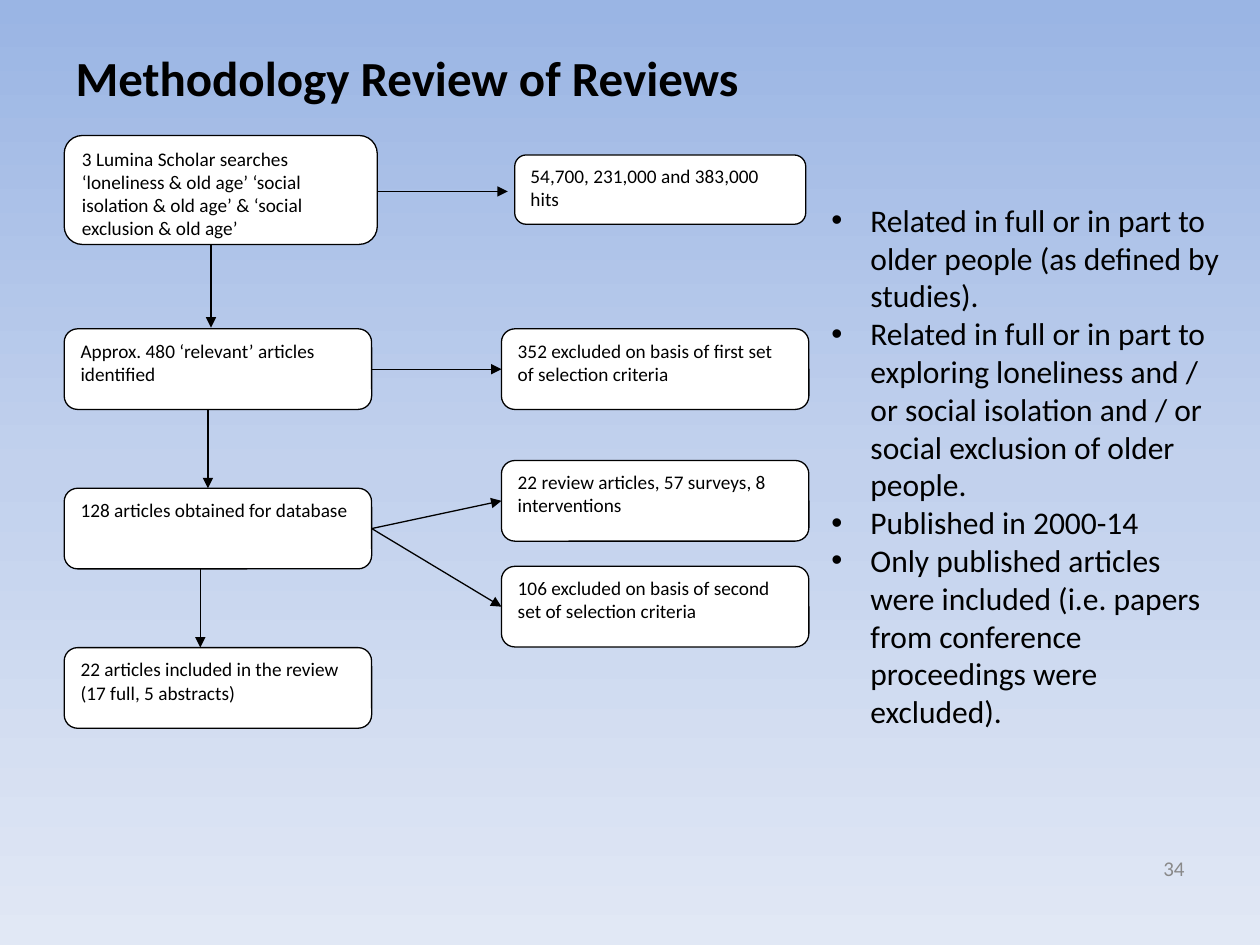
from copy import deepcopy
from dataclasses import dataclass

from pptx import Presentation
from pptx.dml.color import RGBColor
from pptx.enum.shapes import MSO_CONNECTOR, MSO_SHAPE
from pptx.enum.text import MSO_ANCHOR, MSO_AUTO_SIZE, PP_ALIGN
from pptx.oxml.ns import qn
from pptx.util import Inches, Pt

LEFT, RIGHT = 1, 3


@dataclass(frozen=True)
class Theme:
    """Colours, font and type sizes of the slide."""
    font: str = "Calibri"
    ink: str = "000000"
    paper: str = "FFFFFF"
    muted: str = "898989"
    sky: tuple = ((0, "9AB5E4"), (0.5, "C2D1ED"), (1, "E1E8F5"))
    title: float = 28
    body: float = 18
    number: float = 12
    box: float = 11
    line: float = 0.75


@dataclass(frozen=True)
class Area:
    """A rectangle on a grid of 100 columns by 75 rows."""
    col: float
    row: float
    cols: float
    rows: float


@dataclass(frozen=True)
class Box:
    """A flow chart box with its paragraph spacing."""
    key: str
    area: Area
    text: str
    spacing: float = 0


@dataclass(frozen=True)
class Arrow:
    """An arrow from grid point to grid point, with optional joins."""
    start: tuple
    end: tuple
    source: str = ""
    target: str = ""


THEME = Theme()
STEP_COL, RESULT_COL, BOX_COLS, BOX_ROWS = 5.1, 39.8, 24.4, 6.4


def step(key: str, col: float, row: float, text: str) -> Box:
    """Return a box of the standard size."""
    return Box(key, Area(col, row, BOX_COLS, BOX_ROWS), text)


BOXES = (
    Box("searches", Area(STEP_COL, 10.75, 24.85, 8.65),
        "3 Lumina Scholar searches ‘loneliness & old age’ ‘social isolation & old age’ "
        "& ‘social exclusion & old age’", 5),
    Box("hits", Area(40.85, 12.3, 23.1, 5.5), "54,700, 231,000 and 383,000 hits", 5),
    step("relevant", STEP_COL, 26.1, "Approx. 480 ‘relevant’ articles identified"),
    step("first cut", RESULT_COL, 26.1, "352 excluded on basis of first set of selection criteria"),
    step("database", STEP_COL, 38.75, "128 articles obtained for database"),
    step("types", RESULT_COL, 36.55, "22 review articles, 57 surveys, 8 interventions"),
    step("second cut", RESULT_COL, 44.95, "106 excluded on basis of second set of selection criteria"),
    step("included", STEP_COL, 51.4, "22 articles included in the review (17 full, 5 abstracts)"),
)
ARROWS = (
    Arrow((16.75, 19.4), (16.75, 26)),
    Arrow((16.5, 32.5), (16.5, 38.75)),
    Arrow((15.9, 45.15), (15.9, 51.4)),
    Arrow((30, 15.2), (40.3, 15.2)),
    Arrow((29.5, 29.3), (39.8, 29.3), "relevant", "first cut"),
    Arrow((29.5, 41.95), (39.8, 39.75), "database", "types"),
    Arrow((29.5, 41.95), (39.8, 48.15), "database", "second cut"),
)
CRITERIA = (
    "Related in full or in part to older people (as defined by studies).",
    "Related in full or in part to exploring loneliness and / or social isolation and / or "
    "social exclusion of older people.",
    "Published in 2000-14",
    "Only published articles were included (i.e. papers from conference proceedings were excluded).",
)


def grid(units: float) -> int:
    """Convert columns or rows to a length."""
    return Inches(units / 10)


def place(area: Area) -> tuple:
    """Return left, top, width and height of an area."""
    return grid(area.col), grid(area.row), grid(area.cols), grid(area.rows)


def write(tf, text: str, size: float, color: str = THEME.ink, bold: bool = False,
          align=PP_ALIGN.LEFT, anchor=MSO_ANCHOR.TOP) -> None:
    """Fill a text frame and format all of its runs."""
    tf.text = text
    tf.word_wrap = True
    tf.auto_size = MSO_AUTO_SIZE.NONE
    tf.vertical_anchor = anchor
    for p in tf.paragraphs:
        p.alignment = align
        for r in p.runs:
            r.font.name, r.font.size, r.font.bold = THEME.font, Pt(size), bold
            r.font.color.rgb = RGBColor.from_string(color)


def paint_background(s) -> None:
    """Give the slide a downward gradient of three stops."""
    fill = s.background.fill
    fill.gradient()
    fill.gradient_angle = 270
    stops = s.element.find(".//" + qn("a:gsLst"))
    stops.append(deepcopy(stops[-1]))
    for stop, (position, color) in zip(fill.gradient_stops, THEME.sky):
        stop.position = position
        stop.color.rgb = RGBColor.from_string(color)


def draw_box(s, box: Box):
    """Draw a rounded flow chart box."""
    sp = s.shapes.add_shape(MSO_SHAPE.ROUNDED_RECTANGLE, *place(box.area))
    sp.shadow.inherit = False
    sp.fill.solid()
    sp.fill.fore_color.rgb = RGBColor.from_string(THEME.paper)
    sp.line.color.rgb = RGBColor.from_string(THEME.ink)
    sp.line.width = Pt(THEME.line)
    write(sp.text_frame, box.text, THEME.box)
    p = sp.text_frame.paragraphs[0]
    p.space_before = p.space_after = Pt(box.spacing)
    return sp


def draw_arrow(s, arrow: Arrow, boxes: dict) -> None:
    """Draw an arrow and join it to its boxes."""
    points = (grid(v) for v in arrow.start + arrow.end)
    sp = s.shapes.add_connector(MSO_CONNECTOR.STRAIGHT, *points)
    if arrow.source:
        sp.begin_connect(boxes[arrow.source], RIGHT)
    if arrow.target:
        sp.end_connect(boxes[arrow.target], LEFT)
    sp.line.color.rgb = RGBColor.from_string(THEME.ink)
    sp.line.width = Pt(THEME.line)
    ln = sp.line._get_or_add_ln()
    ln.append(ln.makeelement(qn("a:tailEnd"), {"type": "triangle"}))
    sp_pr = ln.getparent()
    sp_pr.append(sp_pr.makeelement(qn("a:effectLst"), {}))


def draw_criteria(s, area: Area) -> None:
    """Write the selection criteria as a bulleted list."""
    tf = s.shapes.add_textbox(*place(area)).text_frame
    write(tf, "\n".join(CRITERIA), THEME.body)
    for p in tf.paragraphs:
        p_pr = p._p.get_or_add_pPr()
        p_pr.set("marL", str(grid(3.1)))
        p_pr.set("indent", str(-grid(3.1)))
        p_pr.append(p_pr.makeelement(qn("a:buFont"), {"typeface": "Arial"}))
        p_pr.append(p_pr.makeelement(qn("a:buChar"), {"char": "•"}))


def main() -> None:
    """Build the slide and save it."""
    prs = Presentation()
    prs.slide_width, prs.slide_height = grid(100), grid(75)
    s = prs.slides.add_slide(prs.slide_layouts[5])
    paint_background(s)
    title = s.shapes.title
    title.left, title.top, title.width, title.height = place(Area(5, 3.05, 68.6, 6.1))
    write(title.text_frame, "Methodology Review of Reviews", THEME.title, bold=True,
          anchor=MSO_ANCHOR.MIDDLE)
    number = s.shapes.add_textbox(*place(Area(69.7, 64.3, 25.3, 9.2)))
    write(number.text_frame, "34", THEME.number, THEME.muted, align=PP_ALIGN.RIGHT,
          anchor=MSO_ANCHOR.MIDDLE)
    boxes = {box.key: draw_box(s, box) for box in BOXES}
    for arrow in ARROWS:
        draw_arrow(s, arrow, boxes)
    draw_criteria(s, Area(65, 15.45, 33.1, 46.4))
    prs.save("out.pptx")


if __name__ == "__main__":
    main()
